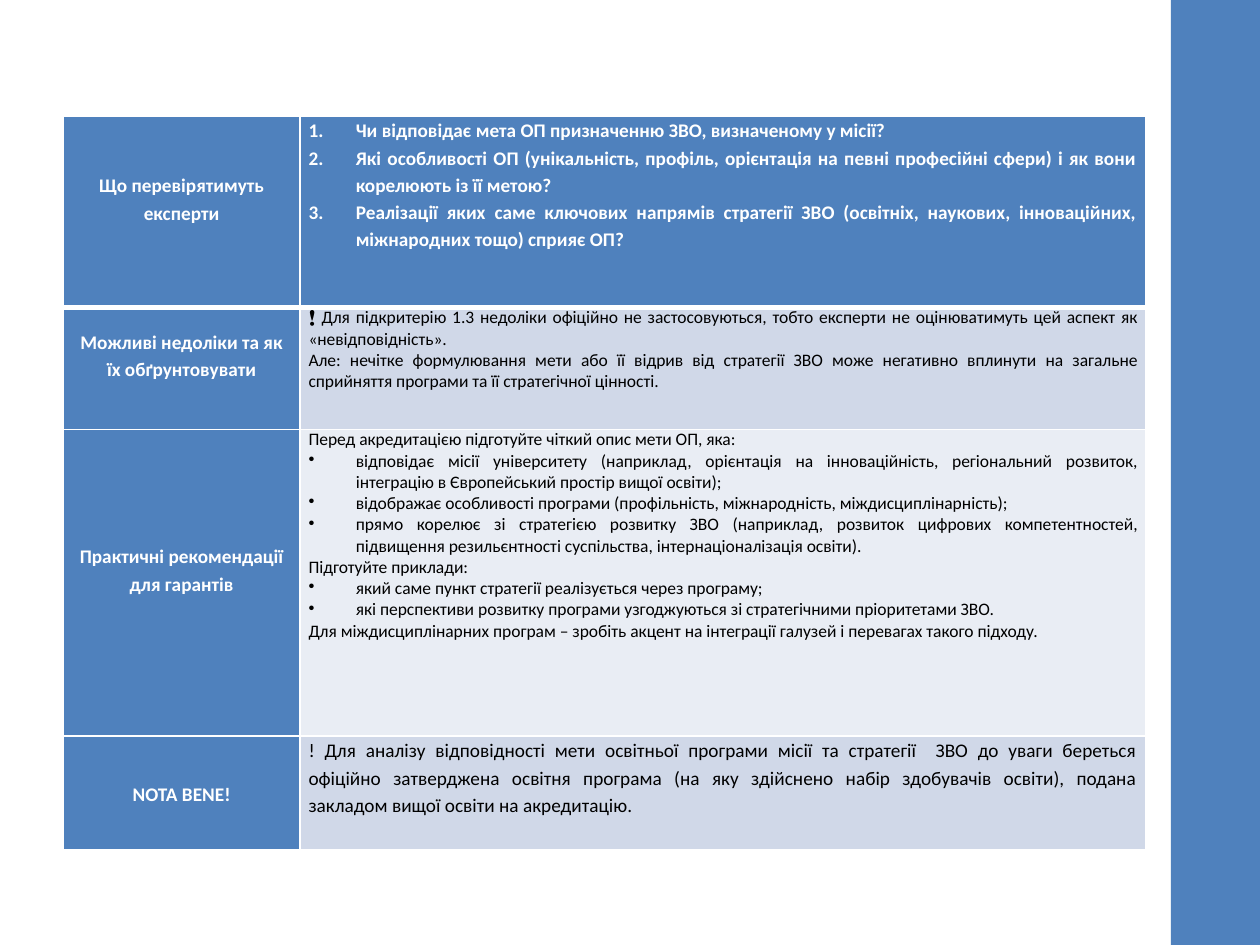
from lxml.etree import SubElement
from pptx import Presentation
from pptx.dml.color import RGBColor
from pptx.enum.shapes import MSO_SHAPE
from pptx.enum.text import MSO_ANCHOR, PP_ALIGN
from pptx.oxml.ns import qn
from pptx.util import Pt

COLORS = {
    "blue": "4F81BD",
    "band": "D0D8E8",
    "light": "E9EDF4",
    "white": "FFFFFF",
    "black": "000000",
}
FONT = "Calibri"
SLIDE_W, SLIDE_H = 720, 540
STRIPE_W = 51
TABLE_LEFT, TABLE_TOP = 36.3, 66.2
COLUMN_WIDTHS = (135, 483.6)
LABEL_SIZE = 11
LABEL_LIFT = 15.4
SPACING = 1.15
INDENT = 27
TAB = 36

ROWS = [
    {
        "label": "Що перевірятимуть експерти", "lift": LABEL_LIFT, "height": 109.4,
        "fill": "blue", "color": "white", "bold": True, "size": 11, "spacing": SPACING,
        "body": [
            ("number", "Чи відповідає мета ОП призначенню ЗВО, визначеному у місії?"),
            ("number", "Які особливості ОП (унікальність, профіль, орієнтація на певні професійні сфери) і як вони корелюють із її метою?"),
            ("number", "Реалізації яких саме ключових напрямів стратегії ЗВО (освітніх, наукових, інноваційних, міжнародних тощо) сприяє ОП?"),
        ],
    },
    {
        "label": "Можливі недоліки та як їх обґрунтовувати", "lift": LABEL_LIFT, "height": 69.8,
        "fill": "band", "color": "black", "bold": False, "size": 10, "spacing": 1.0,
        "body": [
            ("plain", "❗ Для підкритерію 1.3 недоліки офіційно не застосовуються, тобто експерти не оцінюватимуть цей аспект як «невідповідність»."),
            ("plain", "Але: нечітке формулювання мети або її відрив від стратегії ЗВО може негативно вплинути на загальне сприйняття програми та її стратегічної цінності."),
        ],
    },
    {
        "label": "Практичні рекомендації для гарантів", "lift": LABEL_LIFT, "height": 175.2,
        "fill": "light", "color": "black", "bold": False, "size": 10, "spacing": 1.0,
        "body": [
            ("plain", "Перед акредитацією підготуйте чіткий опис мети ОП, яка:"),
            ("bullet", "відповідає місії університету (наприклад, орієнтація на інноваційність, регіональний розвиток, інтеграцію в Європейський простір вищої освіти);"),
            ("bullet", "відображає особливості програми (профільність, міжнародність, міждисциплінарність);"),
            ("bullet", "прямо корелює зі стратегією розвитку ЗВО (наприклад, розвиток цифрових компетентностей, підвищення резильєнтності суспільства, інтернаціоналізація освіти)."),
            ("plain", "Підготуйте приклади:"),
            ("bullet", "який саме пункт стратегії реалізується через програму;"),
            ("bullet", "які перспективи розвитку програми узгоджуються зі стратегічними пріоритетами ЗВО."),
            ("plain", "Для міждисциплінарних програм – зробіть акцент на інтеграції галузей і перевагах такого підходу."),
        ],
    },
    {
        "label": "NOTA BENE!", "lift": 0, "height": 65,
        "fill": "band", "color": "black", "bold": False, "size": 11, "spacing": SPACING,
        "body": [
            ("plain", "! Для аналізу відповідності мети освітньої програми місії та стратегії  ЗВО до уваги береться офіційно затверджена освітня програма (на яку здійснено набір здобувачів освіти), подана закладом вищої освіти на акредитацію."),
        ],
    },
]


def rgb(name):
    return RGBColor.from_string(COLORS[name])


def add_marker(paragraph, kind):
    properties = paragraph._p.get_or_add_pPr()
    properties.set("marL", str(Pt(INDENT)))
    properties.set("indent", str(-Pt(INDENT)))
    if kind == "number":
        SubElement(properties, qn("a:buAutoNum"), type="arabicPeriod")
    else:
        SubElement(properties, qn("a:buChar"), char="•")
        tabs = SubElement(properties, qn("a:tabLst"))
        SubElement(tabs, qn("a:tab"), pos=str(Pt(TAB)), algn="l")


def style_cell(cell, fill, top, bottom):
    properties = cell._tc.get_or_add_tcPr()
    for side, width in (("L", 1), ("R", 1), ("T", top), ("B", bottom)):
        line = SubElement(properties, qn(f"a:ln{side}"), w=str(Pt(width)))
        solid = SubElement(line, qn("a:solidFill"))
        SubElement(solid, qn("a:srgbClr"), val=COLORS["white"])
    cell.fill.solid()
    cell.fill.fore_color.rgb = rgb(fill)
    cell.margin_left = cell.margin_right = Pt(5)
    cell.margin_top = cell.margin_bottom = 0


def write_cell(cell, items, align, spacing, size, color, bold):
    frame = cell.text_frame
    for index, (kind, text) in enumerate(items):
        paragraph = frame.add_paragraph() if index else frame.paragraphs[0]
        paragraph.alignment = align
        paragraph.line_spacing = spacing
        if kind != "plain":
            add_marker(paragraph, kind)
        run = paragraph.add_run()
        run.text = text
        run.font.name = FONT
        run.font.size = Pt(size)
        run.font.bold = bold
        run.font.color.rgb = rgb(color)


def add_stripe(slide):
    stripe = slide.shapes.add_shape(
        MSO_SHAPE.RECTANGLE, Pt(SLIDE_W - STRIPE_W), 0, Pt(STRIPE_W), Pt(SLIDE_H))
    stripe.shadow.inherit = False
    stripe.fill.solid()
    stripe.fill.fore_color.rgb = rgb("blue")
    stripe.line.fill.background()


def add_criteria_table(slide):
    table = slide.shapes.add_table(
        len(ROWS), len(COLUMN_WIDTHS), Pt(TABLE_LEFT), Pt(TABLE_TOP),
        Pt(sum(COLUMN_WIDTHS)), Pt(sum(row["height"] for row in ROWS))).table
    for column, width in zip(table.columns, COLUMN_WIDTHS):
        column.width = Pt(width)
    for index, row in enumerate(ROWS):
        table.rows[index].height = Pt(row["height"])
        label, body = table.cell(index, 0), table.cell(index, 1)
        top = 3 if index == 1 else 1
        bottom = 3 if index == 0 else 1
        style_cell(label, "blue", top, bottom)
        style_cell(body, row["fill"], top, bottom)
        label.vertical_anchor = MSO_ANCHOR.MIDDLE
        label.margin_bottom = Pt(row["lift"])
        write_cell(label, [("plain", row["label"])], PP_ALIGN.CENTER,
                   SPACING, LABEL_SIZE, "white", True)
        write_cell(body, row["body"], PP_ALIGN.JUSTIFY,
                   row["spacing"], row["size"], row["color"], row["bold"])


def main():
    presentation = Presentation()
    presentation.slide_width, presentation.slide_height = Pt(SLIDE_W), Pt(SLIDE_H)
    slide = presentation.slides.add_slide(presentation.slide_layouts[6])
    add_stripe(slide)
    add_criteria_table(slide)
    presentation.save("out.pptx")


if __name__ == "__main__":
    main()
